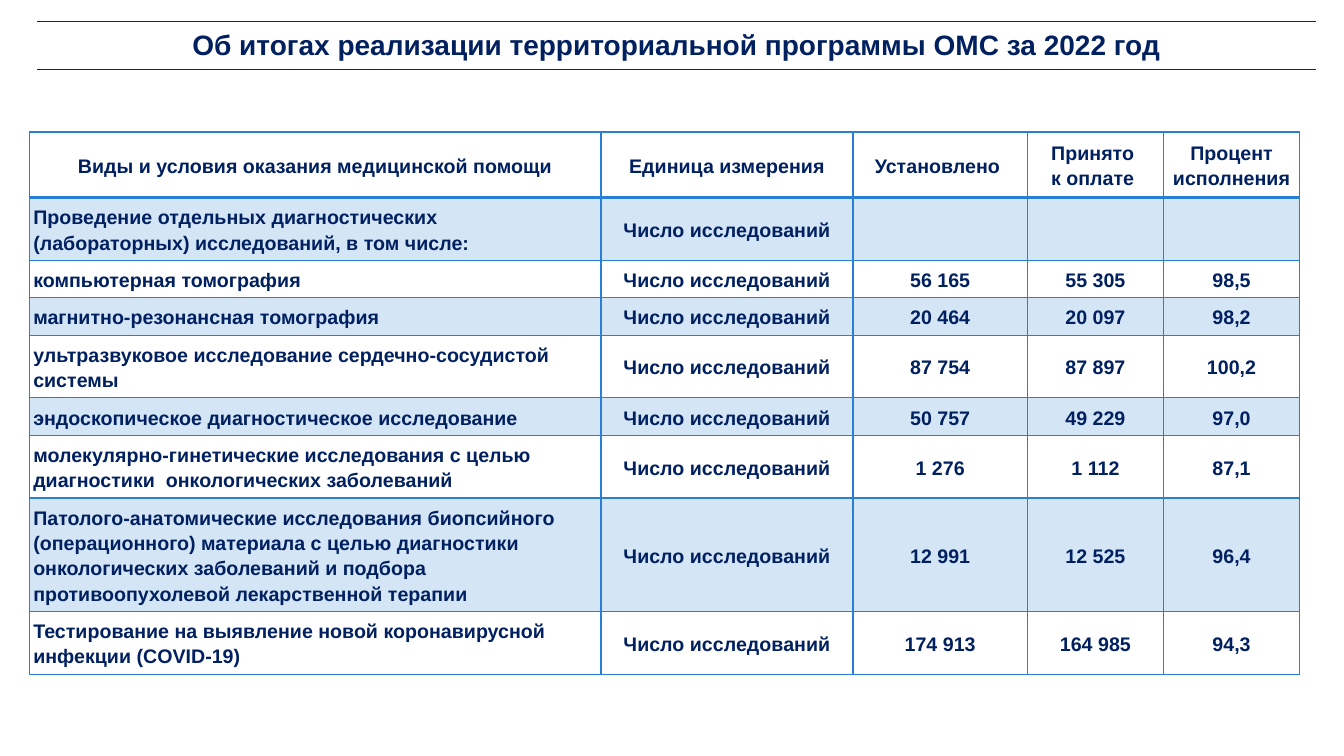
"""Build the slide on the results of the 2022 medical insurance programme."""
from dataclasses import dataclass

from lxml.etree import SubElement
from pptx import Presentation
from pptx.dml.color import RGBColor
from pptx.enum.text import MSO_ANCHOR as Anchor, PP_ALIGN as Align
from pptx.oxml.ns import qn
from pptx.util import Inches, Pt

NAVY, BLUE, MAROON = "002060", "297FD5", "800000"
TITLE = "Об итогах реализации территориальной программы ОМС за 2022 год"
COLUMN_WIDTHS = (5.67, 2.5, 1.73, 1.35, 1.35)
HEADER_HEIGHT = 0.65
HEADERS = ("Виды и условия оказания медицинской помощи", "Единица измерения",
           "Установлено ", "Принято \nк оплате ", "Процент исполнения")
UNIT = "Число исследований"


@dataclass(frozen=True)
class Study:
    name: str
    height: float
    planned: str = ""
    accepted: str = ""
    percent: str = ""

    def texts(self) -> tuple:
        return self.name, UNIT, self.planned, self.accepted, self.percent


STUDIES = (
    Study("Проведение отдельных диагностических (лабораторных) исследований, в том числе:", 0.56),
    Study("компьютерная томография", 0.34, "56 165", "55 305", "98,5"),
    Study("магнитно-резонансная томография", 0.34, "20 464", "20 097", "98,2"),
    Study("ультразвуковое исследование сердечно-сосудистой системы", 0.53,
          "87 754", "87 897", "100,2"),
    Study("эндоскопическое диагностическое исследование", 0.34, "50 757", "49 229", "97,0"),
    Study("молекулярно-гинетические исследования с целью диагностики  онкологических заболеваний",
          0.56, "1 276", "1 112", "87,1"),
    Study("Патолого-анатомические исследования биопсийного (операционного) материала с целью "
          "диагностики онкологических заболеваний и подбора противоопухолевой лекарственной "
          "терапии", 1, "12 991", "12 525", "96,4"),
    Study("Тестирование на выявление новой коронавирусной инфекции (COVID-19)", 0.56,
          "174 913", "164 985", "94,3"),
)


def colour(value: str) -> RGBColor:
    return RGBColor.from_string(value)


def assign(target, values: dict) -> None:
    for name, value in values.items():
        setattr(target, name, value)


def write(cell, text: str, size: float, align: Align, spacing: float) -> None:
    para = cell.text_frame.paragraphs[0]
    para.text = text
    assign(para, {"alignment": align, "line_spacing": spacing})
    for line_break in para._p.findall(qn("a:br")):
        SubElement(line_break, qn("a:rPr"), sz=str(int(size * 100)))
    for span in para.runs:
        assign(span.font, {"name": "Arial", "size": Pt(size), "bold": True})
        span.font.color.rgb = colour(NAVY)


def add_borders(cell, widths: dict, shade: str) -> None:
    properties = cell._tc.get_or_add_tcPr()
    for side, width in widths.items():
        line = SubElement(properties, qn(f"a:ln{side}"), w=str(Pt(width)))
        if width:
            SubElement(SubElement(line, qn("a:solidFill")), qn("a:srgbClr"), val=shade)
        else:
            SubElement(line, qn("a:noFill"))


def fill_cell(cell, shaded: bool) -> None:
    if not shaded:
        cell.fill.background()
        return
    cell.fill.solid()
    cell.fill.fore_color.rgb = colour(BLUE)
    tint = cell._tc.tcPr.find(qn("a:solidFill")).find(qn("a:srgbClr"))
    SubElement(tint, qn("a:alpha"), val="20000")


def add_grid(page, left: float, top: float, widths: tuple, heights: tuple):
    table = page.shapes.add_table(len(heights), len(widths), Inches(left), Inches(top),
                                  Inches(sum(widths)), Inches(sum(heights))).table
    assign(table, {"first_row": False, "horz_banding": False})
    for column, width in zip(table.columns, widths):
        column.width = Inches(width)
    for row, height in zip(table.rows, heights):
        row.height = Inches(height)
    return table


def add_title(page) -> None:
    cell = add_grid(page, 0.37, 0.21, (12.68,), (0.48,)).cell(0, 0)
    cell.vertical_anchor = Anchor.MIDDLE
    add_borders(cell, {"L": 0, "R": 0, "T": 1, "B": 1}, MAROON)
    fill_cell(cell, False)
    write(cell, TITLE, 20, Align.CENTER, 1.0)


def add_studies(page) -> None:
    heights = (HEADER_HEIGHT, *(study.height for study in STUDIES))
    rows = (HEADERS, *(study.texts() for study in STUDIES))
    table = add_grid(page, 0.29, 1.31, COLUMN_WIDTHS, heights)
    for row, texts in enumerate(rows):
        padding = Inches(0.06 if row else 0.07)
        for column, text in enumerate(texts):
            cell = table.cell(row, column)
            add_borders(cell, {"L": 1, "R": 1, "T": 2 if row == 1 else 1,
                               "B": 2 if row == 0 else 1}, BLUE)
            fill_cell(cell, row % 2 == 1)
            if text:
                assign(cell, {"vertical_anchor": Anchor.MIDDLE,
                              "margin_left": Inches(0.04), "margin_right": Inches(0.04),
                              "margin_top": padding, "margin_bottom": padding})
                align = Align.LEFT if row and column == 0 else Align.CENTER
                write(cell, text, 14, align, 1.15)


def main() -> None:
    deck = Presentation()
    assign(deck, {"slide_width": Inches(13.33), "slide_height": Inches(7.5)})
    page = deck.slides.add_slide(deck.slide_layouts.get_by_name("Blank"))
    add_studies(page)
    add_title(page)
    deck.save("out.pptx")


if __name__ == "__main__":
    main()
